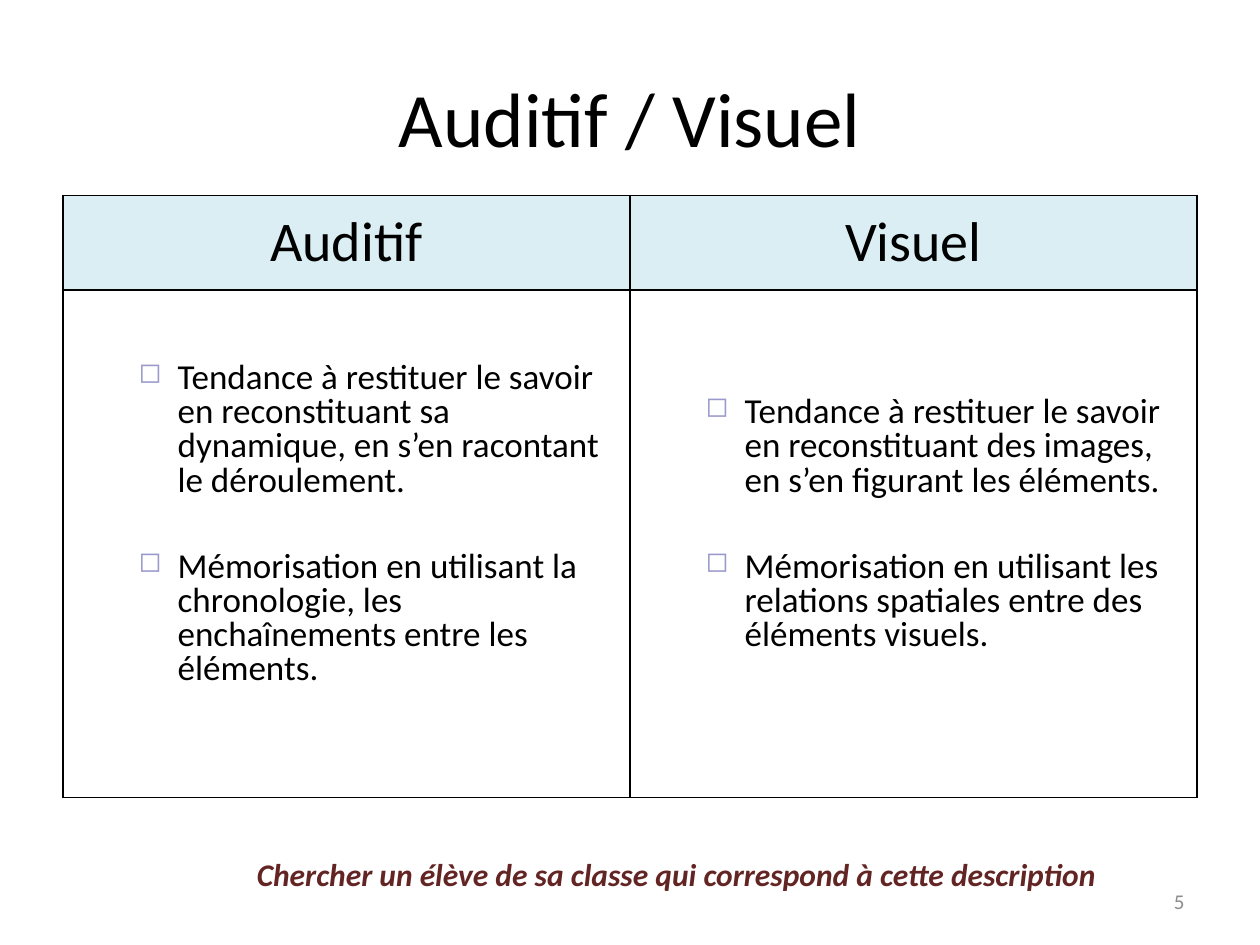
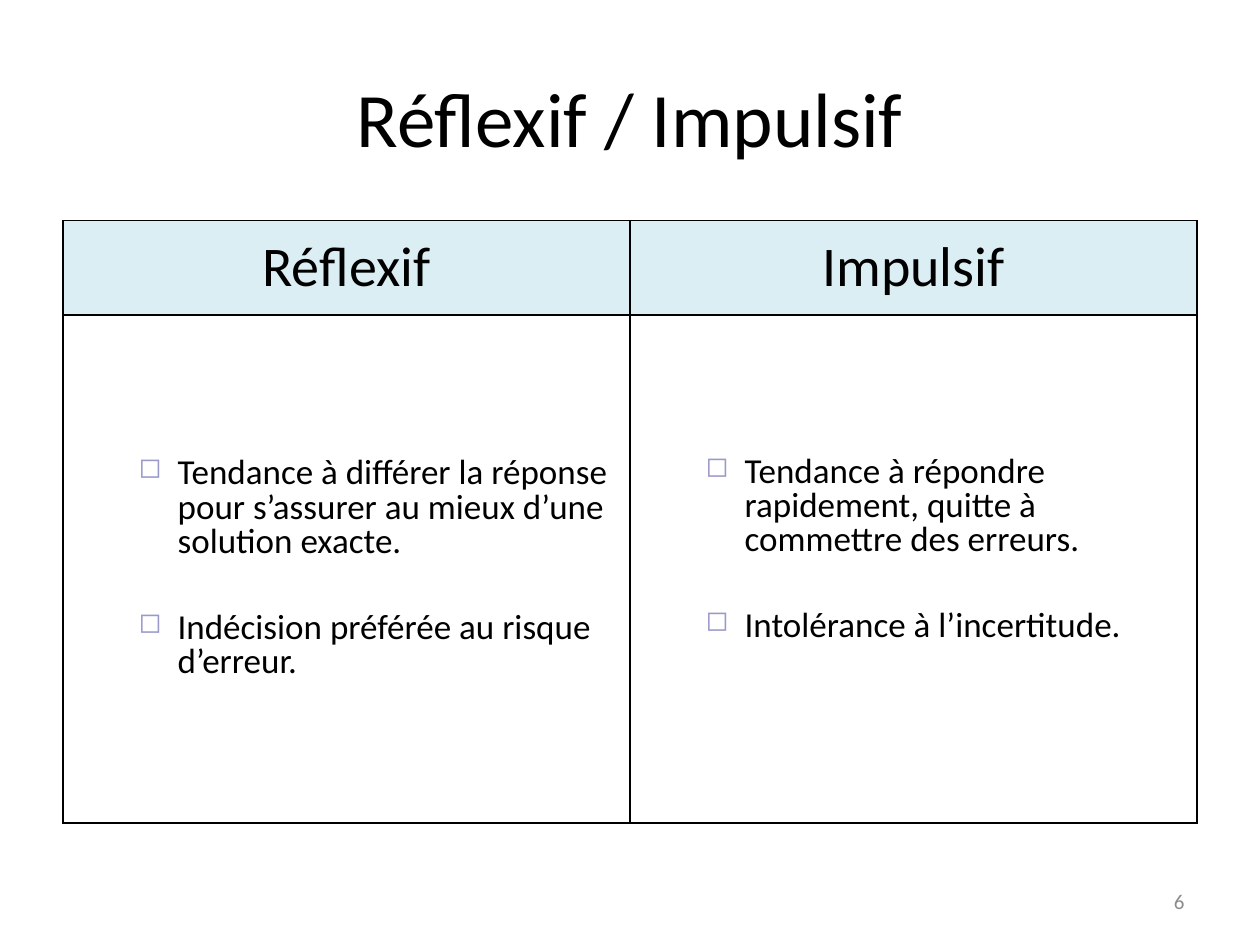
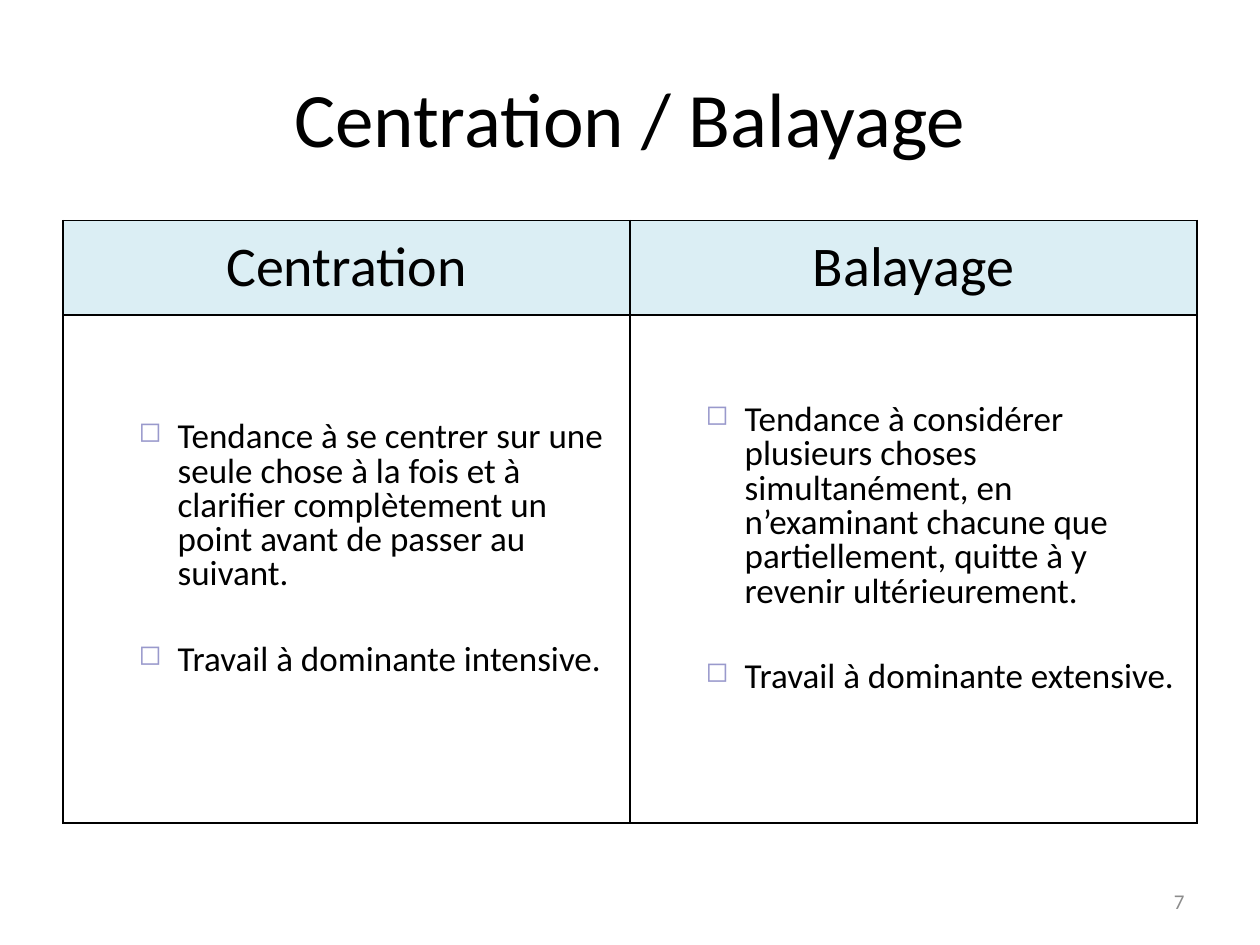
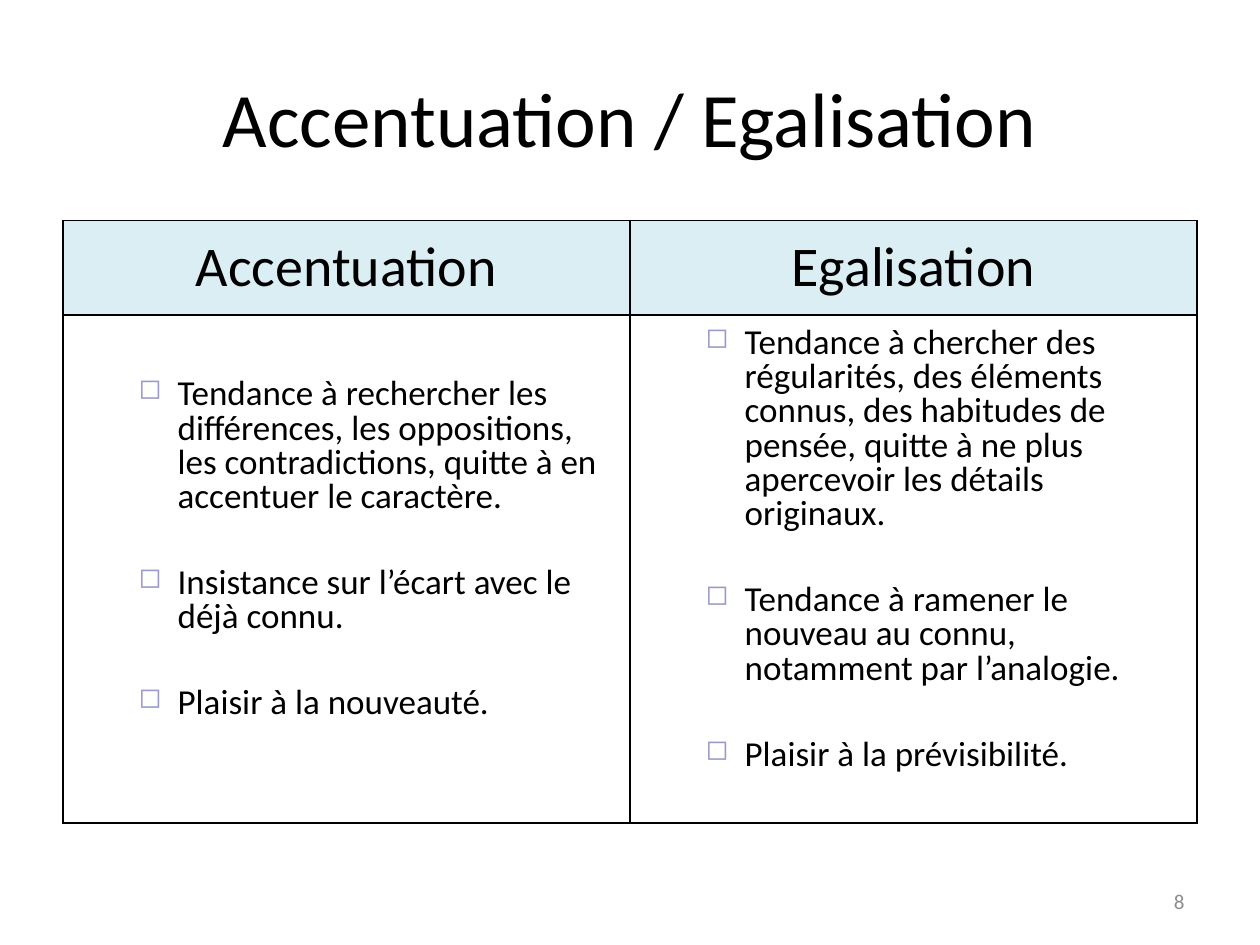
from dataclasses import dataclass

from lxml.etree import SubElement
from pptx import Presentation
from pptx.dml.color import RGBColor
from pptx.enum.text import MSO_ANCHOR as Anchor, PP_ALIGN as Align
from pptx.oxml import parse_xml
from pptx.oxml.ns import nsdecls, qn
from pptx.util import Emu, Inches, Pt

SLIDE_WIDTH, SLIDE_HEIGHT = Inches(10), Inches(7.5)
FONT = "Calibri"
BLACK, WHITE, GREY = "000000", "FFFFFF", "8C8C8C"
HEADER_BLUE, BULLET_LILAC, NOTE_RED = "DBEEF4", "9999CC", "632523"
FIRST_NUMBER = 5
HEADER_HEIGHT, BODY_HEIGHT = Inches(0.75), Inches(4.03)
BULLET_INDENT, BULLET_HANG = Inches(0.81), Inches(0.31)
FIRST_GAP, NEXT_GAP = Pt(5), Pt(29.5)
MARGIN, RAISED_MARGIN = Inches(0.05), Inches(0.35)


@dataclass(frozen=True)
class Box:
    """A place in inches, read off the slide's grid."""
    left: float
    top: float
    width: float
    height: float

    def place(self) -> tuple[Emu, Emu, Emu, Emu]:
        return (Inches(self.left), Inches(self.top),
                Inches(self.width), Inches(self.height))


@dataclass(frozen=True)
class TextStyle:
    size: int
    color: str = BLACK
    align: Align = Align.LEFT
    bold: bool = False
    italic: bool = False


@dataclass(frozen=True)
class Profile:
    """One learning style: a column of the comparison table."""
    name: str
    traits: tuple[str, ...]
    bottom_margin: Emu = RAISED_MARGIN


@dataclass(frozen=True)
class Comparison:
    profiles: tuple[Profile, Profile]
    table_top: float = 1.75
    note: str = ""


TITLE_BOX = Box(0.5, 0.3, 9, 1.25)
NUMBER_BOX = Box(7.17, 6.95, 2.33, 0.4)
NOTE_BOX = Box(1.94, 6.74, 7, 0.4)

TITLE = TextStyle(44, align=Align.CENTER)
HEADER = TextStyle(32, align=Align.CENTER)
TRAIT = TextStyle(20)
NUMBER = TextStyle(12, GREY, Align.RIGHT)
NOTE = TextStyle(18, NOTE_RED, bold=True, italic=True)

COMPARISONS = (
    Comparison((
        Profile("Auditif", (
            "Tendance à restituer le savoir en reconstituant sa dynamique, "
            "en s’en racontant le déroulement.",
            "Mémorisation en utilisant la chronologie, les enchaînements "
            "entre les éléments.")),
        Profile("Visuel", (
            "Tendance à restituer le savoir en reconstituant des images, "
            "en s’en figurant les éléments.",
            "Mémorisation en utilisant les relations spatiales entre des "
            "éléments visuels."))),
        table_top=1.55,
        note="Chercher un élève de sa classe qui correspond à cette description"),
    Comparison((
        Profile("Réflexif", (
            "Tendance à différer la réponse pour s’assurer au mieux d’une "
            "solution exacte.",
            "Indécision préférée au risque d’erreur."), MARGIN),
        Profile("Impulsif", (
            "Tendance à répondre rapidement, quitte à commettre des erreurs.",
            "Intolérance à l’incertitude.")))),
    Comparison((
        Profile("Centration", (
            "Tendance à se centrer sur une seule chose à la fois et à clarifier "
            "complètement un point avant de passer au suivant.",
            "Travail à dominante intensive.")),
        Profile("Balayage", (
            "Tendance à considérer plusieurs choses simultanément, en "
            "n’examinant chacune que partiellement, quitte à y revenir "
            "ultérieurement.",
            "Travail à dominante extensive.")))),
    Comparison((
        Profile("Accentuation", (
            "Tendance à rechercher les différences, les oppositions, les "
            "contradictions, quitte à en accentuer le caractère.",
            "Insistance sur l’écart avec le déjà connu.",
            "Plaisir à la nouveauté.")),
        Profile("Egalisation", (
            "Tendance à chercher des régularités, des éléments connus, des "
            "habitudes de pensée, quitte à ne plus apercevoir les détails "
            "originaux.",
            "Tendance à ramener le nouveau au connu, notamment par l’analogie.",
            "Plaisir à la prévisibilité.")))),
)


def rgb(color: str) -> RGBColor:
    return RGBColor.from_string(color)


def write(paragraph, text: str, style: TextStyle) -> None:
    paragraph.text = text
    paragraph.alignment = style.align
    for run in paragraph.runs:
        font = run.font
        font.name, font.size = FONT, Pt(style.size)
        font.bold, font.italic = style.bold, style.italic
        font.color.rgb = rgb(style.color)


def add_text(slide, box: Box, text: str, style: TextStyle,
             anchor: Anchor = Anchor.MIDDLE, wrap: bool = True) -> None:
    text_frame = slide.shapes.add_textbox(*box.place()).text_frame
    text_frame.word_wrap = wrap
    text_frame.vertical_anchor = anchor
    write(text_frame.paragraphs[0], text, style)


def add_bullet(paragraph) -> None:
    properties = paragraph._p.get_or_add_pPr()
    properties.set("marL", str(BULLET_INDENT))
    properties.set("indent", str(-BULLET_HANG))
    color = SubElement(properties, qn("a:buClr"))
    SubElement(color, qn("a:srgbClr"), val=BULLET_LILAC)
    SubElement(properties, qn("a:buSzPct"), val="80000")
    SubElement(properties, qn("a:buChar"), char="◻")


def style_cell(cell, fill: str) -> None:
    """Fill the cell, centre it vertically and rule its four sides."""
    cell.vertical_anchor = Anchor.MIDDLE
    cell.fill.solid()
    cell.fill.fore_color.rgb = rgb(fill)
    properties = cell._tc.get_or_add_tcPr()
    for index, side in enumerate(("lnL", "lnR", "lnT", "lnB")):
        properties.insert(index, parse_xml(
            f'<a:{side} {nsdecls("a")} w="{Pt(1)}"><a:solidFill>'
            f'<a:srgbClr val="{BLACK}"/></a:solidFill></a:{side}>'))


def fill_traits(cell, profile: Profile) -> None:
    cell.margin_bottom = profile.bottom_margin
    text_frame = cell.text_frame
    for index, trait in enumerate(profile.traits):
        paragraph = text_frame.add_paragraph() if index else text_frame.paragraphs[0]
        write(paragraph, trait, TRAIT)
        paragraph.level = 1
        paragraph.line_spacing = 0.8
        paragraph.space_before = NEXT_GAP if index else FIRST_GAP
        add_bullet(paragraph)


def add_comparison_table(slide, comparison: Comparison) -> None:
    table = slide.shapes.add_table(
        2, len(comparison.profiles), Inches(0.5), Inches(comparison.table_top),
        Inches(9), HEADER_HEIGHT + BODY_HEIGHT).table
    table.first_row = table.horz_banding = False
    table.rows[0].height, table.rows[1].height = HEADER_HEIGHT, BODY_HEIGHT
    for column, profile in enumerate(comparison.profiles):
        header, body = table.cell(0, column), table.cell(1, column)
        style_cell(header, HEADER_BLUE)
        write(header.text_frame.paragraphs[0], profile.name, HEADER)
        style_cell(body, WHITE)
        fill_traits(body, profile)


def add_comparison_slide(presentation, comparison: Comparison, number: int) -> None:
    slide = presentation.slides.add_slide(presentation.slide_layouts[6])
    title = " / ".join(profile.name for profile in comparison.profiles)
    add_text(slide, TITLE_BOX, title, TITLE)
    add_comparison_table(slide, comparison)
    add_text(slide, NUMBER_BOX, str(number), NUMBER)
    if comparison.note:
        add_text(slide, NOTE_BOX, comparison.note, NOTE, Anchor.TOP, wrap=False)


def main() -> None:
    presentation = Presentation()
    presentation.slide_width, presentation.slide_height = SLIDE_WIDTH, SLIDE_HEIGHT
    for number, comparison in enumerate(COMPARISONS, FIRST_NUMBER):
        add_comparison_slide(presentation, comparison, number)
    presentation.save("out.pptx")


if __name__ == "__main__":
    main()
